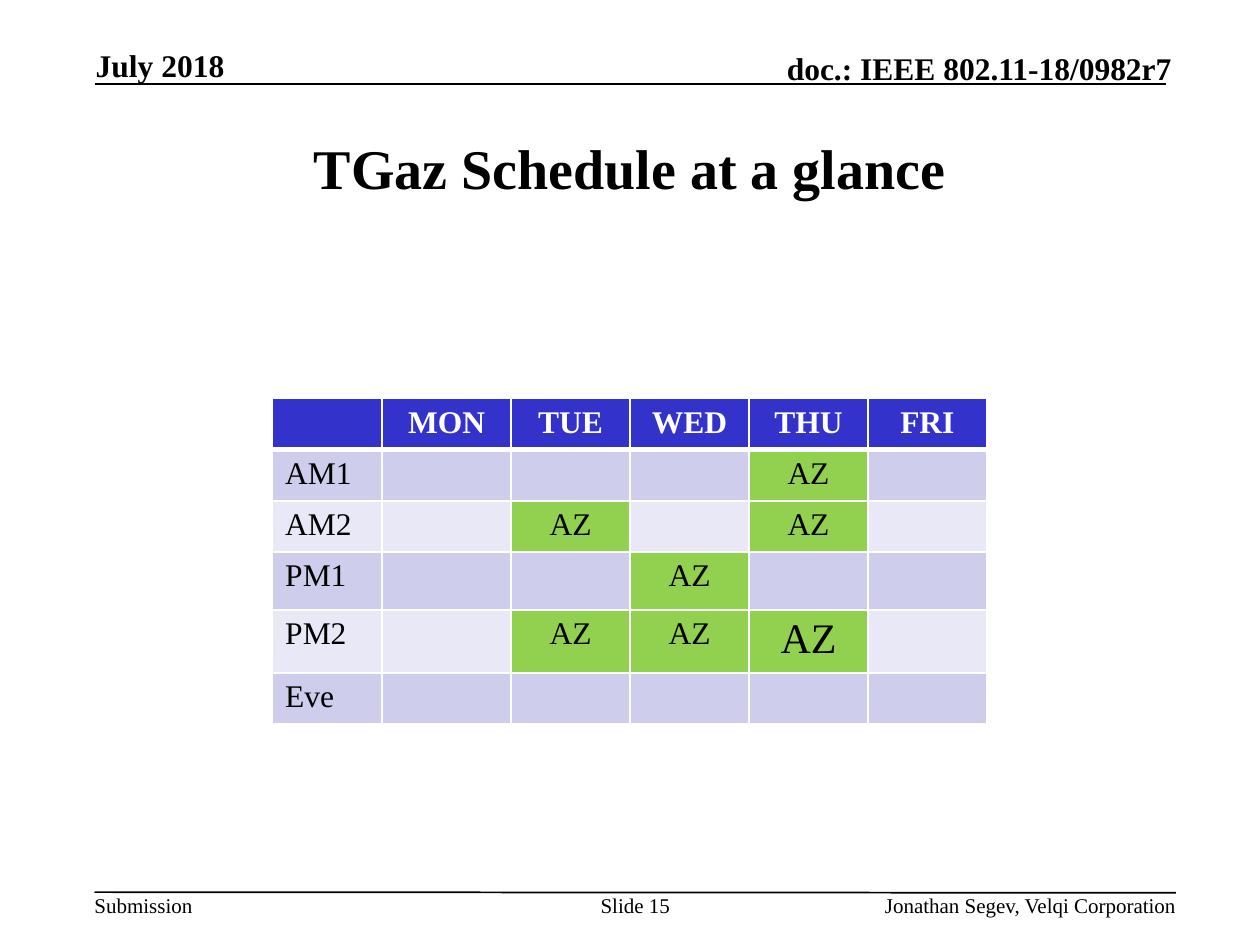
from lxml.etree import SubElement
from pptx import Presentation
from pptx.dml.color import RGBColor
from pptx.enum.shapes import MSO_CONNECTOR
from pptx.enum.text import MSO_ANCHOR, PP_ALIGN
from pptx.oxml.ns import qn
from pptx.util import Pt

COLORS = {
    "ink": "000000",
    "white": "FFFFFF",
    "head": "3333CC",
    "odd": "CECEEC",
    "even": "E8E8F6",
    "slot": "92D050",
}
LEFT, MID, RIGHT = PP_ALIGN.LEFT, PP_ALIGN.CENTER, PP_ALIGN.RIGHT
TOP, BOTTOM = MSO_ANCHOR.TOP, MSO_ANCHOR.BOTTOM


def write(frame, text, size, bold=False, align=LEFT, color="ink"):
    """Fill the first paragraph of a text frame with one styled run."""
    para = frame.paragraphs[0]
    para.alignment = align
    run = para.add_run()
    run.text = text
    font = run.font
    font.name, font.size, font.bold = "Times New Roman", Pt(size), bold
    font.color.rgb = RGBColor.from_string(COLORS[color])


def edge(cell, side, width):
    """Draw a white border on one side of a cell."""
    line = SubElement(cell._tc.get_or_add_tcPr(), qn("a:" + side), w=str(Pt(width)))
    fill = SubElement(line, qn("a:solidFill"))
    SubElement(fill, qn("a:srgbClr"), val=COLORS["white"])


prs = Presentation()
prs.slide_width, prs.slide_height = Pt(720), Pt(540)
slide = prs.slides.add_slide(prs.slide_layouts[5])
shapes = slide.shapes

# Header and footer rules
for x1, y1, x2, y2 in [(54, 48, 666, 48), (54, 509.8, 672, 510.2)]:
    rule = shapes.add_connector(MSO_CONNECTOR.STRAIGHT, Pt(x1), Pt(y1), Pt(x2), Pt(y2))
    rule.line.width = Pt(1)
    rule.line.color.rgb = RGBColor.from_string(COLORS["ink"])
    SubElement(rule._element.spPr, qn("a:effectLst"))

# Header and footer texts
labels = [
    ("July 2018", 54.7, 26.4, 147.6, 21.6, 18, True, LEFT, BOTTOM),
    ("doc.: IEEE 802.11-18/0982r7", 393.8, 28, 275.8, 21.6, 18, True, RIGHT, BOTTOM),
    ("Submission", 54, 510, 56, 14.4, 12, False, LEFT, TOP),
    ("Slide 15", 342, 510, 42, 28.8, 12, False, MID, TOP),
    ("Jonathan Segev, Velqi Corporation", 422, 510, 250, 14.4, 12, False, RIGHT, TOP),
]
for text, x, y, w, h, size, bold, align, anchor in labels:
    frame = shapes.add_textbox(Pt(x), Pt(y), Pt(w), Pt(h)).text_frame
    frame.word_wrap = True
    frame.vertical_anchor = anchor
    frame.margin_left = frame.margin_right = 0
    frame.margin_top = frame.margin_bottom = 0
    write(frame, text, size, bold, align)

# Title
title = shapes.title
title.left, title.top, title.width, title.height = Pt(54), Pt(54), Pt(612), Pt(83.5)
title.text_frame.vertical_anchor = MSO_ANCHOR.MIDDLE
write(title.text_frame, "TGaz Schedule at a glance", 32, True, MID)

# Schedule
rows = [
    ["", "MON", "TUE", "WED", "THU", "FRI"],
    ["AM1", "", "", "", "AZ", ""],
    ["AM2", "", "AZ", "", "AZ", ""],
    ["PM1", "", "", "AZ", "", ""],
    ["PM2", "", "AZ", "AZ", "AZ", ""],
    ["Eve", "", "", "", "", ""],
]
widths = [62.6, 73.7, 68, 68, 68, 68]
heights = [29.2, 29.2, 29.2, 33.2, 29.2, 29.2]
table = shapes.add_table(
    len(rows), len(widths), Pt(155.8), Pt(227.8), Pt(sum(widths)), Pt(sum(heights))
).table
for col, width in zip(table.columns, widths):
    col.width = Pt(width)
for row, height in zip(table.rows, heights):
    row.height = Pt(height)

for r, row in enumerate(rows):
    for c, text in enumerate(row):
        cell = table.cell(r, c)
        for side in ("lnL", "lnR", "lnT", "lnB"):
            thick = (r == 0 and side == "lnB") or (r == 1 and side == "lnT")
            edge(cell, side, 3 if thick else 1)
        if r == 0:
            tone = "head"
        elif text == "AZ":
            tone = "slot"
        else:
            tone = "odd" if r % 2 else "even"
        cell.fill.solid()
        cell.fill.fore_color.rgb = RGBColor.from_string(COLORS[tone])
        if text:
            size = 24 if (row[0], c) == ("PM2", 4) else 18
            color = "white" if r == 0 else "ink"
            write(cell.text_frame, text, size, r == 0, MID if c else LEFT, color)

prs.save("out.pptx")
